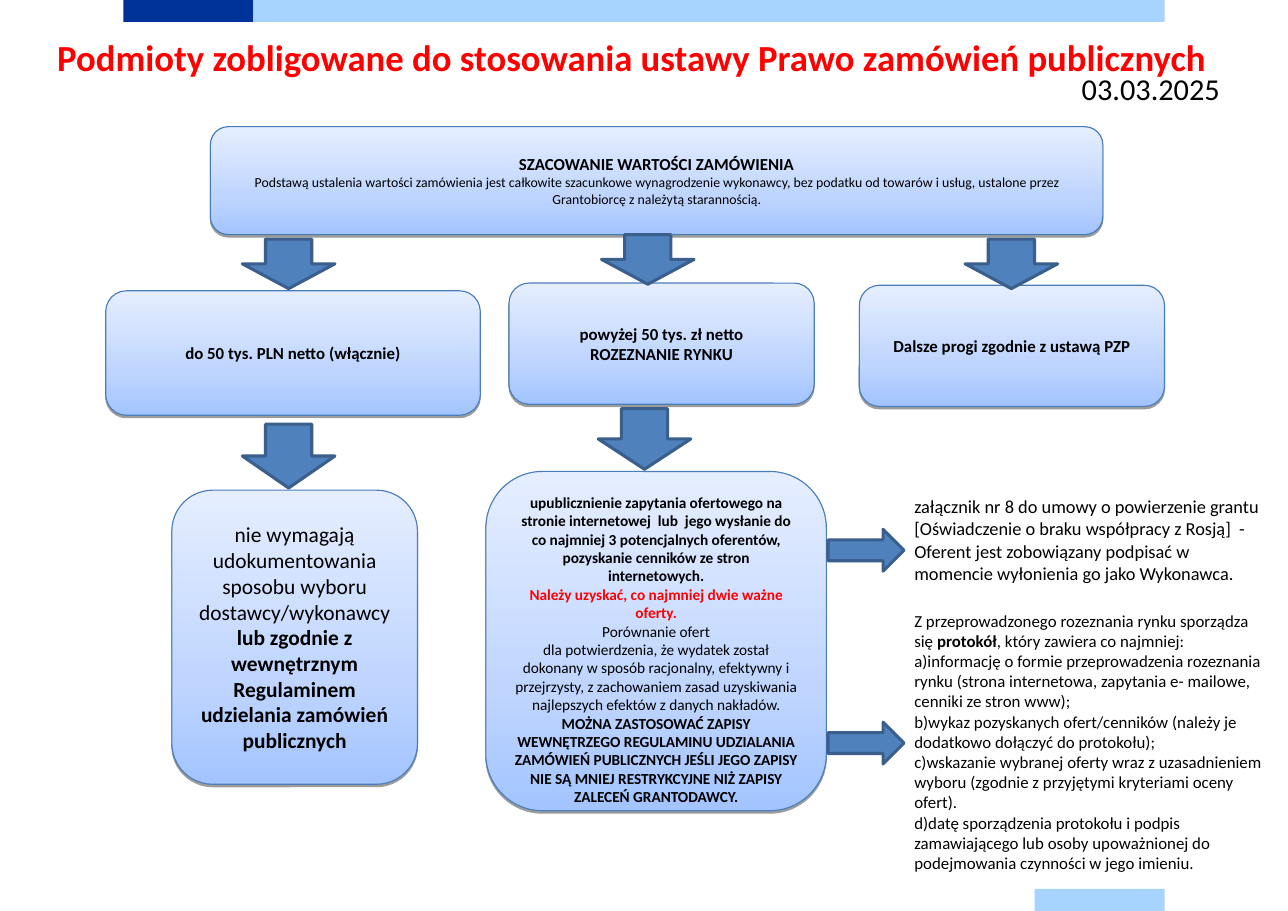
from copy import deepcopy
from typing import NamedTuple

from lxml.etree import SubElement
from pptx import Presentation
from pptx.dml.color import RGBColor
from pptx.enum.shapes import MSO_SHAPE as Preset
from pptx.enum.text import MSO_ANCHOR as Anchor, PP_ALIGN as Align
from pptx.oxml.ns import qn
from pptx.util import Inches, Pt

BLACK, RED = "000000", "FF0000"
NAVY, SKY = "003399", "A6D3FF"
NODE_LINE, ARROW_FILL, ARROW_LINE = "4A7EBB", "4F81BD", "3A5F8C"
NODE_STOPS = [(0, "A3C4FF"), (0.35, "BFD5FF"), (1, "E5EEFF")]


class Box(NamedTuple):
    left: float
    top: float
    width: float
    height: float

    def inner(self, left, top, width, height):
        """Return a box whose offset is counted from this one."""
        return Box(self.left + left, self.top + top, width, height)

    def lengths(self):
        return [Inches(value) for value in self]


def color(hex_text):
    return RGBColor.from_string(hex_text)


def add_span(para, text, size=11, ink=BLACK, bold=False):
    for index, line in enumerate(text.split("\n")):
        if index:
            para.add_line_break()
        span = para.add_run()
        span.text = line
        span.font.name = "Calibri"
        span.font.size = Pt(size)
        span.font.bold = bold
        span.font.color.rgb = color(ink)


def fill_text(frame, paras, align=Align.LEFT, **defaults):
    """Write paragraphs, each a list of (text, format) spans."""
    frame.word_wrap = True
    for index, spans in enumerate(paras):
        para = frame.add_paragraph() if index else frame.paragraphs[0]
        para.alignment = align
        for text, changes in spans:
            add_span(para, text, **{**defaults, **changes})


def add_label(page, box, paras, **defaults):
    label = page.shapes.add_textbox(*box.lengths())
    fill_text(label.text_frame, paras, **defaults)


def add_solid(page, preset, box, fill, line=None):
    shape = page.shapes.add_shape(preset, *box.lengths())
    shape.shadow.inherit = False
    shape.fill.solid()
    shape.fill.fore_color.rgb = color(fill)
    if line:
        shape.line.color.rgb = color(line)
        shape.line.width = Pt(2)
    else:
        shape.line.fill.background()
    return shape


def add_arrow(page, box, rotation=0):
    arrow = add_solid(page, Preset.DOWN_ARROW, box, ARROW_FILL, ARROW_LINE)
    arrow.rotation = rotation


def add_node(page, box, paras, line=NODE_LINE, margin_top=0.05, **defaults):
    """Draw a rounded gradient box with centred text and a hard shadow."""
    node = page.shapes.add_shape(Preset.ROUNDED_RECTANGLE, *box.lengths())
    node.line.color.rgb = color(line)
    node.line.width = Pt(0.75)

    node.fill.gradient()
    node.fill.gradient_angle = 90
    properties = node.element.spPr
    stop_list = properties.find(f".//{qn('a:gsLst')}")
    stop_list.append(deepcopy(stop_list[0]))
    for stop, (position, tint) in zip(node.fill.gradient_stops, NODE_STOPS):
        stop.position = position
        stop.color.rgb = color(tint)

    node.shadow.inherit = False
    shadow = SubElement(properties.find(qn("a:effectLst")), qn("a:outerShdw"),
                        dist=str(Pt(1.6)), dir="5400000", rotWithShape="0")
    shade = SubElement(shadow, qn("a:srgbClr"), val=BLACK)
    SubElement(shade, qn("a:alpha"), val="38000")

    frame = node.text_frame
    frame.vertical_anchor = Anchor.MIDDLE
    frame.margin_top = Inches(margin_top)
    fill_text(frame, paras, align=Align.CENTER, **defaults)


def add_bars(page, box):
    short, thick = 1.18, 0.2
    add_solid(page, Preset.RECTANGLE, box.inner(0, 0, short, thick), NAVY)
    add_solid(page, Preset.RECTANGLE,
              box.inner(short, 0, box.width - short, thick), SKY)
    add_solid(page, Preset.RECTANGLE,
              box.inner(box.width - short, box.height - thick, short, thick), SKY)


def add_header(page, box):
    add_label(page, box.inner(9.3, 0.32, 1.97, 0.4), [[("03.03.2025", {})]], size=19.8)
    title = "Podmioty zobligowane do stosowania ustawy Prawo zamówień publicznych"
    add_label(page, box.inner(0, 0, box.width, 0.5), [[(title, {})]],
              size=24, ink=RED, bold=True)


def add_estimate(page, box):
    add_node(page, box, [
        [("SZACOWANIE WARTOŚCI ZAMÓWIENIA", {"size": 11, "bold": True})],
        [("Podstawą ustalenia wartości zamówienia jest całkowite szacunkowe "
          "wynagrodzenie wykonawcy, bez podatku od towarów i usług, ustalone przez "
          "Grantobiorcę z należytą starannością.", {})],
    ], line="4579B8", size=9)


def add_step(page, box, paras, arrow_left, arrow_top, arrow_height=0.45, **options):
    """Draw a node and the arrow that leads down to it."""
    add_node(page, box, paras, **options)
    add_arrow(page, box.inner(arrow_left, arrow_top, 0.84, arrow_height))


def add_thresholds(page, box):
    bold = {"bold": True}
    add_step(page, box.inner(0, 0.07, 3.4, 1.13),
             [[("do 50 tys. PLN netto (włącznie)", bold)]], 1.24, -0.47)
    add_step(page, box.inner(3.66, 0, 2.77, 1.1),
             [[("powyżej 50 tys. zł netto\nROZEZNANIE RYNKU", bold)]], 0.84, -0.44)
    add_step(page, box.inner(6.84, 0.02, 2.77, 1.1),
             [[("Dalsze progi zgodnie z ustawą PZP", bold)]], 0.96, -0.42)


def add_procedures(page, box):
    bold = {"bold": True}
    add_step(page, box.inner(0, 0.17, 2.23, 2.67), [[
        ("nie wymagają udokumentowania sposobu wyboru dostawcy/wykonawcy ", {}),
        ("lub zgodnie z wewnętrznym Regulaminem udzielania zamówień publicznych", bold),
    ]], 0.64, -0.6, 0.58, size=14)
    add_step(page, box.inner(2.85, 0, 3.09, 3.08), [
        [("upublicznienie zapytania ofertowego na stronie internetowej  lub  jego "
          "wysłanie do co najmniej 3 potencjalnych oferentów, pozyskanie cenników "
          "ze stron internetowych.", bold)],
        [("Należy uzyskać, co najmniej dwie ważne oferty.", {"ink": RED, "bold": True})],
        [("Porównanie ofert", {})],
        [("dla potwierdzenia, że wydatek został dokonany w sposób racjonalny, "
          "efektywny i przejrzysty, z zachowaniem zasad uzyskiwania najlepszych "
          "efektów z danych nakładów.", {})],
        [("MOŻNA ZASTOSOWAĆ ZAPISY WEWNĘTRZEGO REGULAMINU UDZIALANIA ZAMÓWIEŃ "
          "PUBLICZNYCH JEŚLI JEGO ZAPISY NIE SĄ MNIEJ RESTRYKCYJNE NIŻ ZAPISY "
          "ZALECEŃ GRANTODAWCY.", bold)],
    ], 1.02, -0.57, 0.55, size=10, margin_top=0.2)


def add_requirements(page, box):
    for top in (0.2, 1.95):
        add_arrow(page, box.inner(0, top, 0.38, 0.69), rotation=270)
    add_label(page, box.inner(0.53, 0, 3.39, 0.91), [[
        ("załącznik nr 8 do umowy o powierzenie grantu [Oświadczenie o braku "
         "współpracy z Rosją]  - Oferent jest zobowiązany podpisać w momencie "
         "wyłonienia go jako Wykonawca.", {})]], size=12)
    add_label(page, box.inner(0.53, 1.04, 3.42, 2.51), [
        [("Z przeprowadzonego rozeznania rynku sporządza się ", {}),
         ("protokół", {"bold": True}),
         (", który zawiera co najmniej:", {})],
        [("a)informację o formie przeprowadzenia rozeznania rynku (strona "
          "internetowa, zapytania e- mailowe, cenniki ze stron www);", {})],
        [("b)wykaz pozyskanych ofert/cenników (należy je dodatkowo dołączyć do "
          "protokołu);", {})],
        [("c)wskazanie wybranej oferty wraz z uzasadnieniem wyboru (zgodnie z "
          "przyjętymi kryteriami oceny ofert).", {})],
        [("d)datę sporządzenia protokołu i podpis zamawiającego lub osoby "
          "upoważnionej do podejmowania czynności w jego imieniu.", {})],
    ])


def main():
    deck = Presentation()
    deck.slide_width, deck.slide_height = Inches(11.69), Inches(8.27)
    page = deck.slides.add_slide(deck.slide_layouts[6])
    add_bars(page, Box(1.12, 0, 9.45, 8.27))
    add_header(page, Box(0.42, 0.27, 11.42, 0.72))
    add_estimate(page, Box(1.91, 1.15, 8.1, 0.98))
    add_thresholds(page, Box(0.96, 2.57, 9.61, 1.2))
    add_procedures(page, Box(1.56, 4.28, 5.94, 3.08))
    add_requirements(page, Box(7.67, 4.45, 3.95, 3.55))
    deck.save("out.pptx")


if __name__ == "__main__":
    main()
